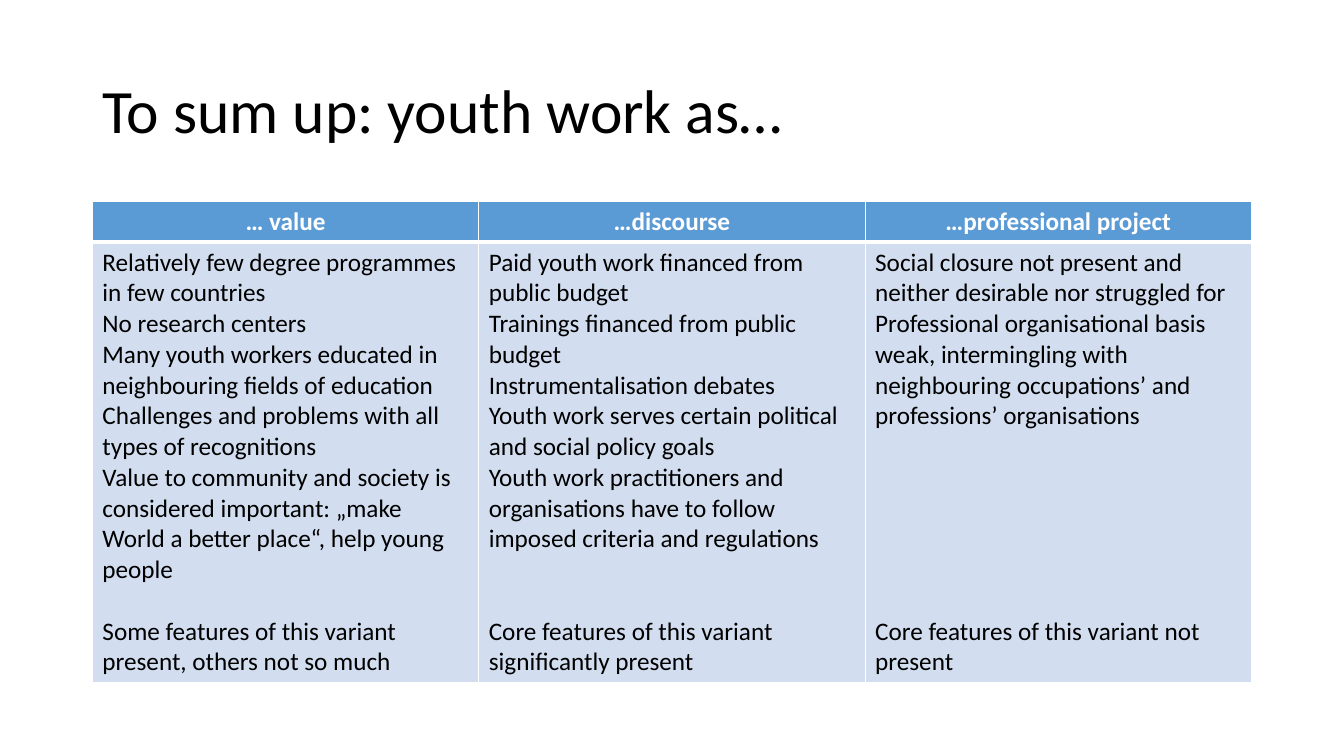
"""Build the summary slide comparing three views of youth work."""
from dataclasses import dataclass

from lxml.etree import SubElement
from pptx import Presentation
from pptx.dml.color import RGBColor
from pptx.enum.text import MSO_ANCHOR, PP_ALIGN
from pptx.oxml.ns import qn
from pptx.util import Pt

COLORS = {"black": "000000", "white": "FFFFFF", "header": "5B9BD5", "body": "D2DEEF"}
FONT = "Calibri"
LEFT, WIDTH = 66, 828
HEADER_HEIGHT, BODY_HEIGHT = 28.8, 314.4
LINE_HEIGHT = 21.97


@dataclass(frozen=True)
class Variant:
    heading: str
    features: tuple[str, ...]
    gap_lines: int
    conclusion: str


VARIANTS = (
    Variant(
        "… value",
        (
            "Relatively few degree programmes in few countries",
            "No research centers",
            "Many youth workers educated in neighbouring fields of education",
            "Challenges and problems with all types of recognitions",
            "Value to community and society is considered important: "
            "„make World a better place“, help young people",
        ),
        1,
        "Some features of this variant present, others not so much",
    ),
    Variant(
        "…discourse",
        (
            "Paid youth work financed from public budget",
            "Trainings financed from public budget",
            "Instrumentalisation debates",
            "Youth work serves certain political and social policy goals",
            "Youth work practitioners and organisations have to follow "
            "imposed criteria and regulations",
        ),
        2,
        "Core features of this variant significantly present",
    ),
    Variant(
        "…professional project",
        (
            "Social closure not present and neither desirable nor struggled for",
            "Professional organisational basis weak, intermingling with "
            "neighbouring occupations’ and professions’ organisations",
        ),
        6,
        "Core features of this variant not present",
    ),
)


def write_paragraph(paragraph, text: str, *, size: float = 18, color: str = "black",
                    bold: bool = False, align=PP_ALIGN.LEFT,
                    line_spacing: float = 1.0, space_before: float = 0) -> None:
    paragraph.alignment = align
    paragraph.line_spacing = line_spacing
    paragraph.space_before = Pt(space_before)
    run = paragraph.add_run()
    run.text = text
    run.font.name = FONT
    run.font.size = Pt(size)
    run.font.bold = bold
    run.font.color.rgb = RGBColor.from_string(COLORS[color])


def style_cell(cell, fill: str, *, top: float = 1, bottom: float = 1) -> None:
    properties = cell._tc.get_or_add_tcPr()
    for side, width in (("L", 1), ("R", 1), ("T", top), ("B", bottom)):
        border = SubElement(properties, qn(f"a:ln{side}"), w=str(Pt(width)))
        border_fill = SubElement(border, qn("a:solidFill"))
        SubElement(border_fill, qn("a:srgbClr"), val=COLORS["white"])
    cell.fill.solid()
    cell.fill.fore_color.rgb = RGBColor.from_string(COLORS[fill])


def add_title(slide, text: str) -> None:
    title = slide.shapes.add_textbox(Pt(LEFT), Pt(28.8), Pt(WIDTH), Pt(104.4))
    title.text_frame.word_wrap = True
    title.text_frame.vertical_anchor = MSO_ANCHOR.MIDDLE
    write_paragraph(title.text_frame.paragraphs[0], text, size=44, line_spacing=0.9)


def fill_column(table, column: int, variant: Variant) -> None:
    header, body = table.cell(0, column), table.cell(1, column)
    style_cell(header, "header", bottom=3)
    write_paragraph(header.text_frame.paragraphs[0], variant.heading,
                    color="white", bold=True, align=PP_ALIGN.CENTER)
    style_cell(body, "body", top=3)
    frame = body.text_frame
    for index, feature in enumerate(variant.features):
        paragraph = frame.add_paragraph() if index else frame.paragraphs[0]
        write_paragraph(paragraph, feature)
    write_paragraph(frame.add_paragraph(), variant.conclusion,
                    space_before=variant.gap_lines * LINE_HEIGHT)


def add_variant_table(slide) -> None:
    table = slide.shapes.add_table(2, len(VARIANTS), Pt(LEFT), Pt(144), Pt(WIDTH),
                                   Pt(HEADER_HEIGHT + BODY_HEIGHT)).table
    table.rows[0].height = Pt(HEADER_HEIGHT)
    table.rows[1].height = Pt(BODY_HEIGHT)
    for column, variant in enumerate(VARIANTS):
        fill_column(table, column, variant)


def main() -> None:
    presentation = Presentation()
    presentation.slide_width, presentation.slide_height = Pt(960), Pt(540)
    slide = presentation.slides.add_slide(presentation.slide_layouts[6])
    add_title(slide, "To sum up: youth work as…")
    add_variant_table(slide)
    presentation.save("out.pptx")


if __name__ == "__main__":
    main()
